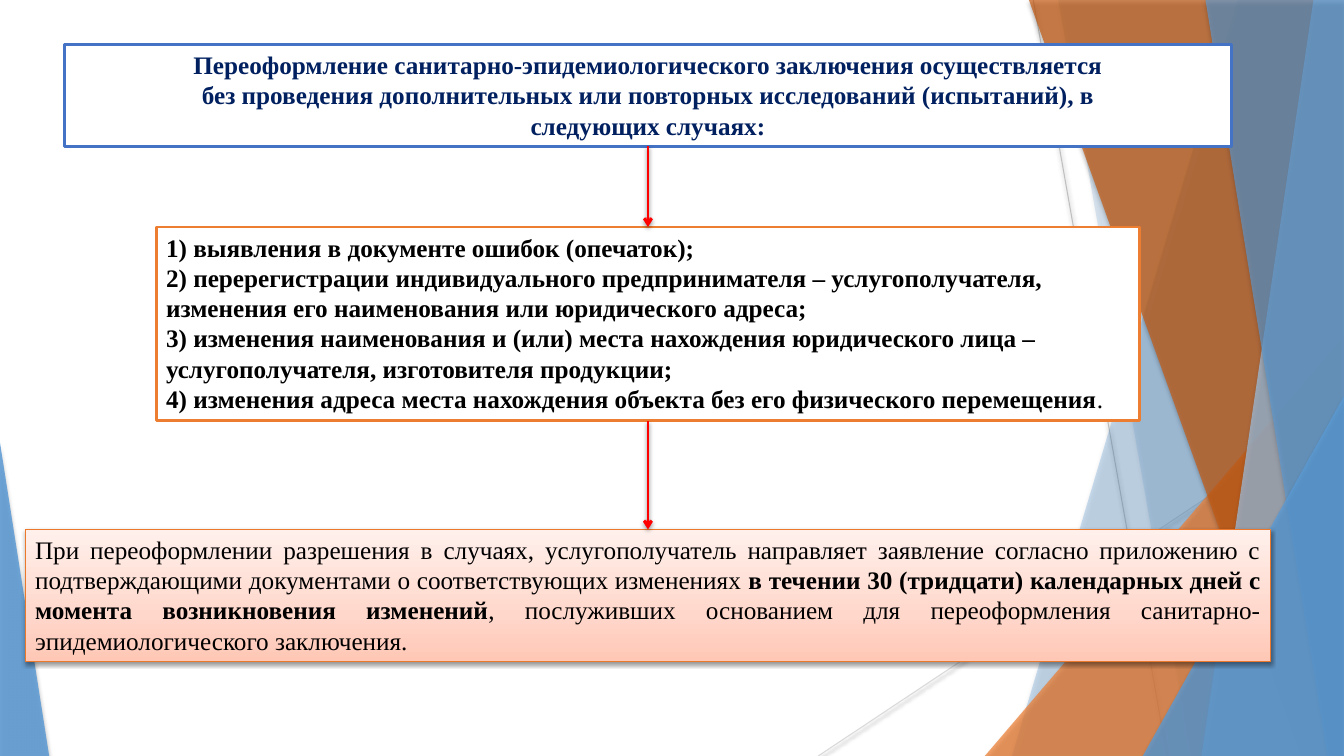
from lxml import etree
from pptx import Presentation
from pptx.dml.color import RGBColor
from pptx.enum.shapes import MSO_CONNECTOR, MSO_SHAPE
from pptx.enum.text import MSO_ANCHOR, MSO_AUTO_SIZE, PP_ALIGN
from pptx.oxml import parse_xml
from pptx.oxml.ns import nsdecls, qn
from pptx.util import Cm, Pt

STRAIGHT = MSO_CONNECTOR.STRAIGHT
TRIANGLE, RECTANGLE = MSO_SHAPE.ISOSCELES_TRIANGLE, MSO_SHAPE.RECTANGLE
LEFT, CENTER, JUSTIFY = PP_ALIGN.LEFT, PP_ALIGN.CENTER, PP_ALIGN.JUSTIFY

WHITE = RGBColor(0xFF, 0xFF, 0xFF)
BLACK = RGBColor(0, 0, 0)
NAVY = RGBColor(0x00, 0x20, 0x60)
RED = RGBColor(0xFF, 0, 0)
BLUE = RGBColor(0x5B, 0x9B, 0xD5)
PALE_BLUE = RGBColor(0x9D, 0xC3, 0xE6)
FRAME_BLUE = RGBColor(0x44, 0x72, 0xC4)
ORANGE = RGBColor(0xED, 0x7D, 0x31)
FRAME_ORANGE = RGBColor(0xEC, 0x79, 0x2B)
RUST = RGBColor(0xC5, 0x5A, 0x11)
GREY = RGBColor(0xBF, 0xBF, 0xBF)
LIGHT_GREY = RGBColor(0xD9, 0xD9, 0xD9)
PEACH_STOPS = [(0, RGBColor(0xFF, 0xC7, 0xB6)),
               (35, RGBColor(0xFF, 0xD7, 0xCB)),
               (100, RGBColor(0xFF, 0xF0, 0xEB))]

WIDTH, HEIGHT = 33.87, 19.05
FONT = "Times New Roman"


def add_shadow(shape, alpha=38, blur=3.1, distance=1.6):
    """Cast a black shadow straight down; call after fill and line are set."""
    properties = shape._element.spPr
    for effects in properties.findall(qn("a:effectLst")):
        properties.remove(effects)
    properties.append(parse_xml(
        f'<a:effectLst {nsdecls("a")}><a:outerShdw blurRad="{Pt(blur)}" '
        f'dist="{Pt(distance)}" dir="5400000" rotWithShape="0">'
        f'<a:srgbClr val="000000"><a:alpha val="{alpha * 1000}"/></a:srgbClr>'
        '</a:outerShdw></a:effectLst>'))


def add_line(start, end, color, width):
    line = slide.shapes.add_connector(STRAIGHT, *map(Cm, start + end))
    line.line.color.rgb = color
    line.line.width = Pt(width)
    add_shadow(line)
    return line


prs = Presentation()
prs.slide_width, prs.slide_height = Cm(WIDTH), Cm(HEIGHT)
slide = prs.slides.add_slide(prs.slide_layouts[6])

# Background: two thin lines, then translucent facets
add_line((26.04, 0), (29.41, HEIGHT), GREY, 0.75)
add_line((WIDTH, 10.24), (20.62, HEIGHT), LIGHT_GREY, 0.75)

# A band runs to the right edge: left x at the top, left x at the bottom.
# A triangle stands on the bottom edge: left, top, width, apex position.
facets = [
    ((31.19, 25.5), BLUE, 30),
    ((26.67, 30.02), BLUE, 20),
    ((24.82, 8.46, 9.05, 1), ORANGE, 72),
    ((25.93, 32.79), RUST, 70),
    ((33.1, 30.28), PALE_BLUE, 70),
    ((30.38, 33.45), BLUE, 65),
    ((28.8, 9.98, 5.07, 1), BLUE, 80),
    ((0, 11.15, 1.24, 0), BLUE, 85),
]
for geometry, color, opacity in facets:
    if len(geometry) == 2:
        top_x, bottom_x = geometry
        outline = slide.shapes.build_freeform(Cm(top_x), 0)
        outline.add_line_segments([(Cm(WIDTH), 0), (Cm(WIDTH), Cm(HEIGHT)),
                                   (Cm(bottom_x), Cm(HEIGHT))])
        facet = outline.convert_to_shape()
    else:
        left, top, width, apex = geometry
        facet = slide.shapes.add_shape(
            TRIANGLE, Cm(left), Cm(top), Cm(width), Cm(HEIGHT - top))
        facet.adjustments[0] = apex
    facet.fill.solid()
    facet.fill.fore_color.rgb = color
    rgb = facet._element.spPr.find(qn("a:solidFill"))[0]
    etree.SubElement(rgb, qn("a:alpha")).set("val", str(opacity * 1000))
    facet.line.fill.background()
    add_shadow(facet, 35, 3, 2)

# Flow of three boxes on one axis; each paragraph is a list of (text, bold) runs
heading = [[(text, True)] for text in (
    "Переоформление санитарно-эпидемиологического заключения осуществляется",
    "без проведения дополнительных или повторных исследований (испытаний), в",
    "следующих случаях:")]
cases = [[(text, True)] for text in (
    "1) выявления в документе ошибок (опечаток);",
    "2) перерегистрации индивидуального предпринимателя – услугополучателя,",
    "изменения его наименования или юридического адреса;",
    "3) изменения наименования и (или) места нахождения юридического лица –",
    "услугополучателя, изготовителя продукции;",
    "4) изменения адреса места нахождения объекта без его физического перемещения")]
cases[-1].append((".", False))
deadline = [[
    ("При переоформлении разрешения в случаях, услугополучатель направляет "
     "заявление согласно приложению с подтверждающими документами о "
     "соответствующих изменениях ", False),
    ("в течении 30 (тридцати) календарных дней с момента возникновения "
     "изменений", True),
    (", послуживших основанием для переоформления "
     "санитарно-эпидемиологического заключения.", False)]]

AXIS = 16.33
boxes = [  # top, width, height, frame, frame width, text colour, alignment, text
    (1.12, 29.41, 2.57, FRAME_BLUE, 2, NAVY, CENTER, heading),
    (5.72, 24.79, 4.88, ORANGE, 2, BLACK, LEFT, cases),
    (13.34, 31.39, 3.33, FRAME_ORANGE, 0.75, BLACK, JUSTIFY, deadline),
]
for top, width, height, frame, frame_width, ink, alignment, paragraphs in boxes:
    box = slide.shapes.add_shape(
        RECTANGLE, Cm(AXIS - width / 2), Cm(top), Cm(width), Cm(height))
    box.shadow.inherit = False
    box.line.color.rgb = frame
    box.line.width = Pt(frame_width)
    if paragraphs is deadline:
        stops = "".join(
            f'<a:gs pos="{position * 1000}"><a:srgbClr val="{color}"/></a:gs>'
            for position, color in PEACH_STOPS)
        box._element.spPr.find(qn("a:prstGeom")).addnext(parse_xml(
            f'<a:gradFill {nsdecls("a")} rotWithShape="1"><a:gsLst>{stops}'
            '</a:gsLst><a:lin ang="16200000" scaled="0"/></a:gradFill>'))
        add_shadow(box)
    else:
        box.fill.solid()
        box.fill.fore_color.rgb = WHITE
    frame_text = box.text_frame
    frame_text.word_wrap = True
    frame_text.auto_size = MSO_AUTO_SIZE.SHAPE_TO_FIT_TEXT
    frame_text.vertical_anchor = MSO_ANCHOR.TOP
    for index, runs in enumerate(paragraphs):
        paragraph = frame_text.add_paragraph() if index else frame_text.paragraphs[0]
        paragraph.alignment = alignment
        paragraph.font.name = FONT
        paragraph.font.size = Pt(18)
        paragraph.font.color.rgb = ink
        for text, bold in runs:
            run = paragraph.add_run()
            run.text = text
            run.font.bold = bold

for upper, lower in zip(boxes, boxes[1:]):
    arrow = add_line((AXIS, upper[0] + upper[2]), (AXIS, lower[0]), RED, 2)
    outline = arrow._element.spPr.find(qn("a:ln"))
    etree.SubElement(outline, qn("a:tailEnd")).set("type", "arrow")

prs.save("out.pptx")
